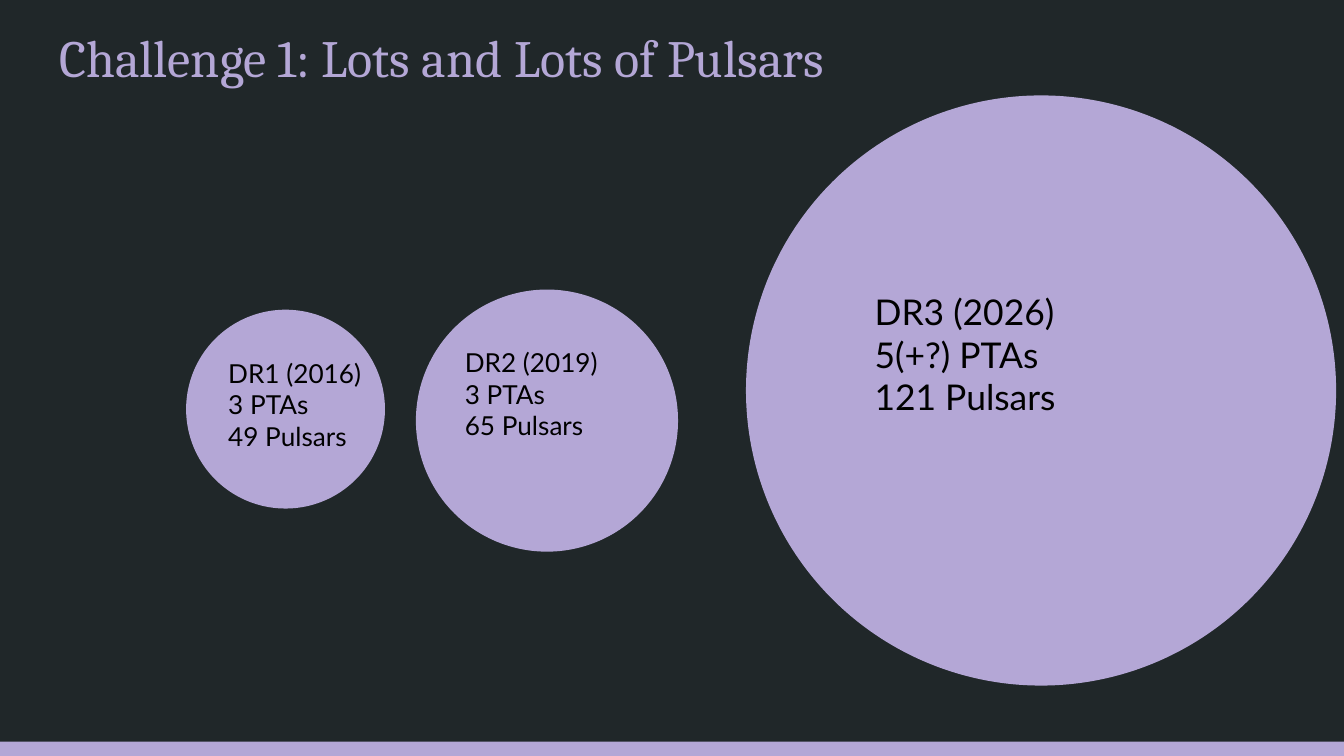
import pptx
import pptx.util
import pptx.dml.color
import pptx.enum.shapes
import pptx.enum.text

Pt = pptx.util.Pt
SHAPE = pptx.enum.shapes.MSO_SHAPE
TEXT = pptx.enum.text

COLOURS = {"background": "202729", "lilac": "B4A7D6", "label": "000000"}
WIDTH, HEIGHT = 720, 405
BAR_HEIGHT = 7.6
FRAME_FORMAT = {
    "margin_left": Pt(7.2),
    "margin_top": Pt(7.2),
    "margin_right": Pt(7.2),
    "margin_bottom": Pt(7.2),
    "word_wrap": True,
    "auto_size": TEXT.MSO_AUTO_SIZE.NONE,
    "vertical_anchor": TEXT.MSO_ANCHOR.TOP,
}
RELEASES = [
    {"box": (100.1, 166.3, 105.8), "label": (15.1, 18, 98.6, 82), "size": 14,
     "lines": ["DR1 (2016)", "3 PTAs", "49 Pulsars"]},
    {"box": (223.2, 155.5, 139.7), "label": (18.7, 23, 131, 82), "size": 14,
     "lines": ["DR2 (2019)", "3 PTAs", "65 Pulsars"]},
    {"box": (400, 51.5, 315.4), "label": (61.5, 96.8, 199.4, 106.6), "size": 19,
     "lines": ["DR3 (2026)", "5(+?) PTAs", "121 Pulsars"]},
]


def colour(name):
    """Return the named colour."""
    return pptx.dml.color.RGBColor.from_string(COLOURS[name])


def write_lines(frame, lines, font_name, size, colour_name):
    """Write left-aligned paragraphs in one font into a text frame."""
    for name, value in FRAME_FORMAT.items():
        setattr(frame, name, value)
    frame.text = "\n".join(lines)
    for paragraph in frame.paragraphs:
        paragraph.alignment = TEXT.PP_ALIGN.LEFT
        for run in paragraph.runs:
            for name, value in {"name": font_name, "size": Pt(size), "bold": False}.items():
                setattr(run.font, name, value)
            run.font.color.rgb = colour(colour_name)


def add_lilac_shape(slide, kind, left, top, width, height):
    """Add a plain lilac shape without an outline and return it."""
    shape = slide.shapes.add_shape(kind, Pt(left), Pt(top), Pt(width), Pt(height))
    shape.shadow.inherit = False
    shape.fill.solid()
    shape.fill.fore_color.rgb = colour("lilac")
    shape.line.fill.background()
    return shape


def place_title(slide, left, top, width, height):
    """Move and format the title placeholder."""
    title = slide.shapes.title
    box = {"left": left, "top": top, "width": width, "height": height}
    for name, value in box.items():
        setattr(title, name, Pt(value))
    write_lines(title.text_frame, ["Challenge 1: Lots and Lots of Pulsars"], "Cambria", 28, "lilac")


def add_release(slide, left, top, diameter, release):
    """Add a data release as a circle with its label inside."""
    circle = add_lilac_shape(slide, SHAPE.OVAL, left, top, diameter, diameter)
    circle.line.color.rgb = colour("lilac")
    circle.line.width = Pt(0.75)
    dx, dy, width, height = release["label"]
    label = slide.shapes.add_textbox(Pt(left + dx), Pt(top + dy), Pt(width), Pt(height))
    write_lines(label.text_frame, release["lines"], "Lato", release["size"], "label")


def main():
    """Build and save the slide."""
    deck = pptx.Presentation()
    deck.slide_width, deck.slide_height = Pt(WIDTH), Pt(HEIGHT)
    slide = deck.slides.add_slide(deck.slide_layouts.get_by_name("Title Only"))
    slide.background.fill.solid()
    slide.background.fill.fore_color.rgb = colour("background")
    add_lilac_shape(slide, SHAPE.RECTANGLE, 0, HEIGHT - BAR_HEIGHT, WIDTH, BAR_HEIGHT)
    place_title(slide, 24.5, 6.5, 671, 73.4)
    for release in RELEASES:
        add_release(slide, *release["box"], release)
    deck.save("out.pptx")


if __name__ == "__main__":
    main()
